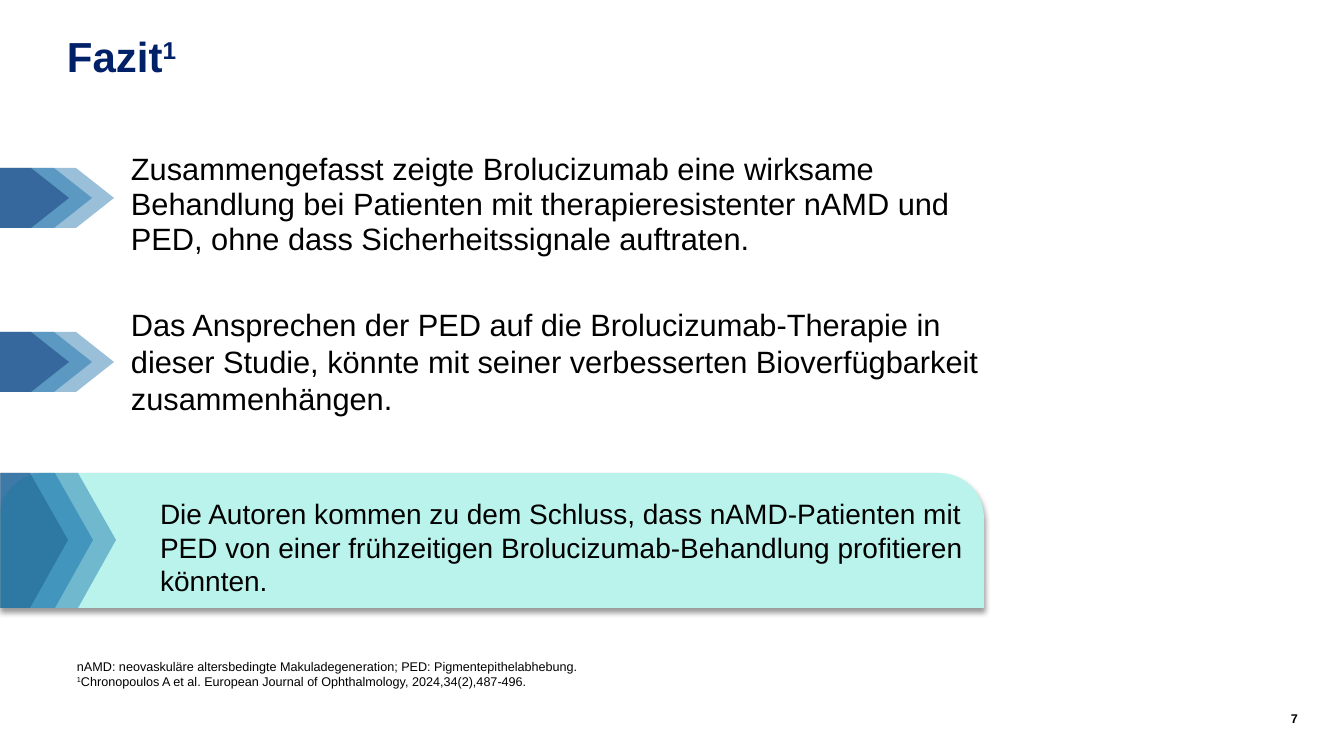
from dataclasses import dataclass

from lxml import etree
from pptx import Presentation
from pptx.dml.color import RGBColor
from pptx.enum.shapes import MSO_SHAPE
from pptx.enum.text import MSO_ANCHOR, MSO_AUTO_SIZE, PP_ALIGN
from pptx.oxml.ns import qn
from pptx.util import Pt

TOP, MIDDLE, BOTTOM = MSO_ANCHOR.TOP, MSO_ANCHOR.MIDDLE, MSO_ANCHOR.BOTTOM
LEFT, RIGHT = PP_ALIGN.LEFT, PP_ALIGN.RIGHT
ROUNDED_TOP = MSO_SHAPE.ROUND_2_SAME_RECTANGLE


@dataclass(frozen=True)
class Theme:
    font: str = "Arial"
    navy: str = "002068"
    black: str = "000000"
    mint: str = "B9F3EC"
    blue: str = "0060A1"
    banner_blue: str = "0061A2"
    banner_navy: str = "1B416A"
    title_size: int = 30
    body_size: int = 22
    banner_size: int = 20
    small_size: int = 9


THEME = Theme()
SLIDE_WIDTH, SLIDE_HEIGHT = 1344, 756
SCALE = 12192000 / SLIDE_WIDTH

# A paragraph is a list of (text, is_superscript) runs.
TITLE = [[("Fazit", False), ("1", True)]]
SUMMARY = [[("Zusammengefasst zeigte Brolucizumab eine wirksame Behandlung bei Patienten "
             "mit therapieresistenter nAMD und PED, ohne dass Sicherheitssignale auftraten.", False)]]
RESPONSE = [[("Das Ansprechen der PED auf die Brolucizumab-Therapie in dieser Studie, könnte "
              "mit seiner verbesserten Bioverfügbarkeit zusammenhängen.", False)]]
CONCLUSION = [[("Die Autoren kommen zu dem Schluss, dass nAMD-Patienten mit PED von einer "
                "frühzeitigen Brolucizumab-Behandlung profitieren könnten.", False)]]
FOOTNOTES = [
    [("nAMD: neovaskuläre altersbedingte Makuladegeneration; PED: Pigmentepithelabhebung.", False)],
    [("1", True), ("Chronopoulos A et al. European Journal of Ophthalmology, 2024,34(2),487-496.", False)],
]
PAGE_NUMBER = [[("7", False)]]

# Arrow layers from back to front: (tip position, length, colour)
POINT_LENGTH = 487
POINT_LAYERS = [(92, POINT_LENGTH, THEME.blue), (114, POINT_LENGTH, THEME.blue),
                (69, POINT_LENGTH, THEME.navy)]
BANNER_LAYERS = [(116, 116, THEME.banner_blue), (68, 70, THEME.banner_navy),
                 (93, 92, THEME.banner_blue)]
BANNER_TOP, BANNER_WIDTH, BANNER_HEIGHT = 473, 984, 135
POINT_TOPS, POINT_HEIGHT = (168, 332), 60
TIP_LENGTH = 38
LAYER_OPACITY = 40


def px(length):
    return round(length * SCALE)


def place(shape, left, top, width, height):
    shape.left, shape.top, shape.width, shape.height = map(px, (left, top, width, height))


def write(shape, paragraphs, size, color=THEME.black, bold=False, align=LEFT,
          anchor=TOP, insets=(0, 0, 0, 0), spacing=None):
    frame = shape.text_frame
    frame.word_wrap = True
    frame.auto_size = MSO_AUTO_SIZE.NONE
    frame.vertical_anchor = anchor
    (frame.margin_left, frame.margin_top,
     frame.margin_right, frame.margin_bottom) = map(px, insets)
    for index, runs in enumerate(paragraphs):
        paragraph = frame.add_paragraph() if index else frame.paragraphs[0]
        paragraph.alignment = align
        if spacing:
            paragraph.line_spacing = spacing
        for text, superscript in runs:
            run = paragraph.add_run()
            run.text = text
            run.font.name, run.font.size, run.font.bold = THEME.font, Pt(size), bold
            run.font.color.rgb = RGBColor.from_string(color)
            if superscript:
                run.font._element.set("baseline", "30000")


def add_text(slide, box, paragraphs, size, **text_format):
    shape = slide.shapes.add_textbox(*map(px, box))
    write(shape, paragraphs, size, **text_format)


def paint(shape, color):
    shape.shadow.inherit = False
    shape.fill.solid()
    shape.fill.fore_color.rgb = RGBColor.from_string(color)
    shape.line.fill.background()


def set_opacity(color_element, percent):
    etree.SubElement(color_element, qn("a:alpha"), val=str(percent * 1000))


def add_arrow_stack(slide, top, height, layers):
    """Overlay translucent arrows that run in from the left slide edge."""
    for tip, length, color in layers:
        start, shoulder = tip - length, tip - TIP_LENGTH
        builder = slide.shapes.build_freeform(start, top, scale=SCALE)
        builder.add_line_segments([(shoulder, top), (tip, top + height / 2),
                                   (shoulder, top + height), (start, top + height)])
        arrow = builder.convert_to_shape()
        paint(arrow, color)
        set_opacity(arrow._element.spPr.find(".//" + qn("a:srgbClr")), LAYER_OPACITY)


def add_banner(slide):
    banner = slide.shapes.add_shape(
        ROUNDED_TOP, *map(px, (0, BANNER_TOP, BANNER_WIDTH, BANNER_HEIGHT)))
    banner.adjustments[0] = 0.33
    paint(banner, THEME.mint)
    effects = banner._element.spPr.find(qn("a:effectLst"))
    shadow = etree.SubElement(effects, qn("a:outerShdw"), blurRad=str(Pt(4)), dist=str(Pt(3)),
                              dir="5400000", algn="t", rotWithShape="0")
    set_opacity(etree.SubElement(shadow, qn("a:srgbClr"), val=THEME.black), 40)
    write(banner, CONCLUSION, THEME.banner_size, anchor=MIDDLE, insets=(147, 5, 4, 5))


def main():
    presentation = Presentation()
    presentation.slide_width, presentation.slide_height = px(SLIDE_WIDTH), px(SLIDE_HEIGHT)
    slide = presentation.slides.add_slide(presentation.slide_layouts[5])

    add_banner(slide)
    add_arrow_stack(slide, BANNER_TOP, BANNER_HEIGHT, BANNER_LAYERS)
    for top in POINT_TOPS:
        add_arrow_stack(slide, top, POINT_HEIGHT, POINT_LAYERS)

    title = slide.shapes.title
    place(title, 67, 34, 811, 118)
    write(title, TITLE, THEME.title_size, color=THEME.navy, bold=True, spacing=0.95)
    add_text(slide, (131, 152, 873, 103), SUMMARY, THEME.body_size, spacing=0.95)
    add_text(slide, (121, 301, 868, 122), RESPONSE, THEME.body_size, insets=(10, 5, 10, 5))
    add_text(slide, (67, 629, 937, 65), FOOTNOTES, THEME.small_size,
             anchor=BOTTOM, insets=(10, 5, 10, 5), spacing=0.95)
    add_text(slide, (1247, 711, 51, 20), PAGE_NUMBER, THEME.small_size, bold=True, align=RIGHT)

    presentation.save("out.pptx")


if __name__ == "__main__":
    main()
